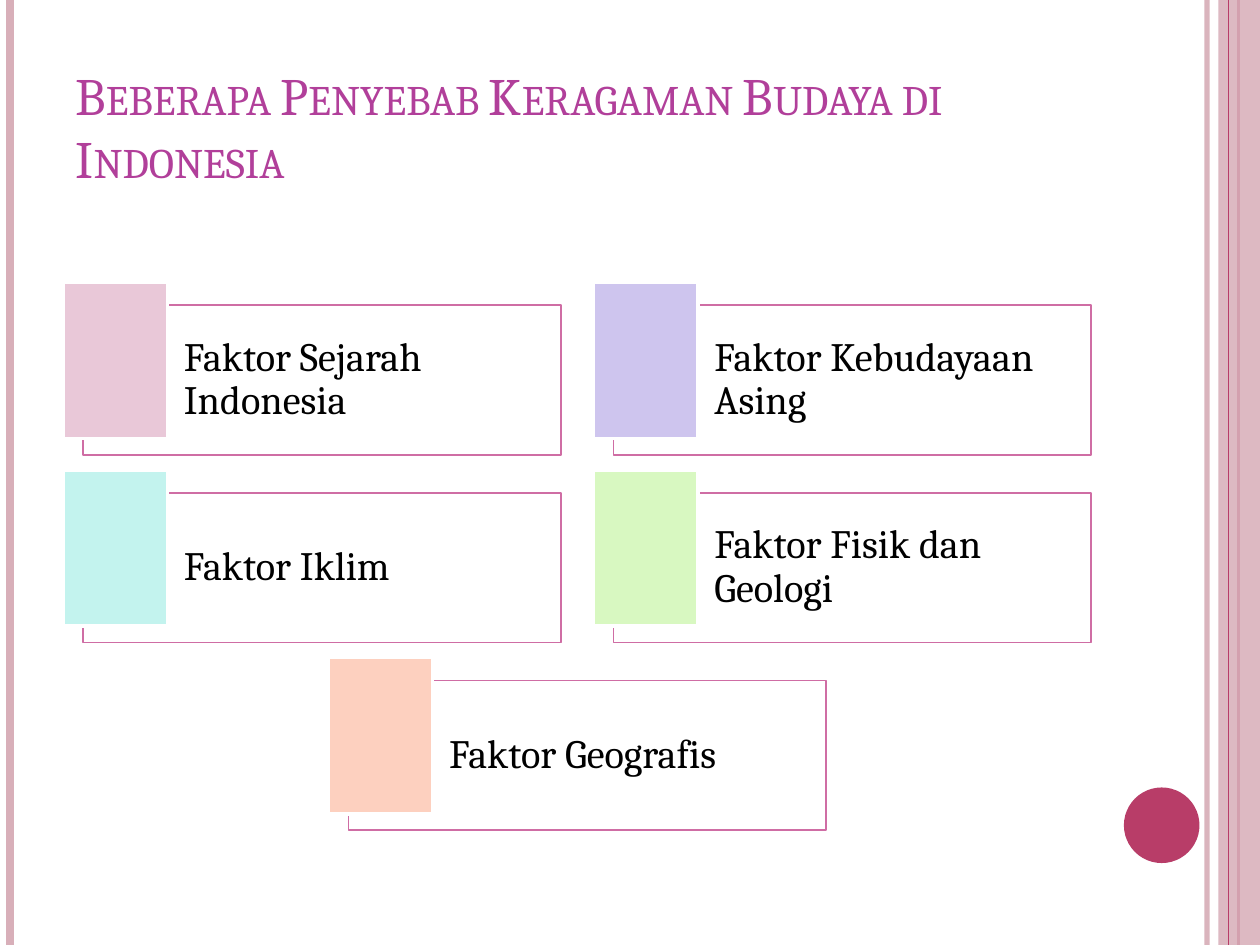
from pptx import Presentation
from pptx.dml.color import RGBColor
from pptx.enum.shapes import MSO_CONNECTOR, MSO_SHAPE
from pptx.enum.text import MSO_ANCHOR, MSO_AUTO_SIZE, PP_ALIGN
from pptx.oxml.ns import qn
from pptx.util import Inches, Pt
from lxml import etree

WHITE = RGBColor(0xFF, 0xFF, 0xFF)
BLACK = RGBColor(0, 0, 0)
ROSE = RGBColor(0xD8, 0xAF, 0xB9)
CRIMSON = RGBColor(0xB8, 0x3D, 0x68)
PURPLE = RGBColor(0xB1, 0x3F, 0x9A)
PINK = RGBColor(0xCF, 0x6D, 0xA4)

FACTORS = [
    ("Faktor Sejarah Indonesia", RGBColor(0xE9, 0xC8, 0xD8)),
    ("Faktor Kebudayaan Asing", RGBColor(0xCE, 0xC5, 0xEE)),
    ("Faktor Iklim", RGBColor(0xC3, 0xF3, 0xEE)),
    ("Faktor Fisik dan Geologi", RGBColor(0xD8, 0xF8, 0xC1)),
    ("Faktor Geografis", RGBColor(0xFD, 0xD0, 0xBF)),
]
COLUMNS = 2
TILE_W, TILE_H = 3.95, 1.37
ROW_PITCH = 1.49


def set_alpha(fill_parent, percent):
    """Make the solid colour found under the element partly transparent."""
    clr = fill_parent.find(".//" + qn("a:srgbClr"))
    etree.SubElement(clr, qn("a:alpha")).set("val", str(percent * 1000))


def add_block(slide, kind, x, y, w, h, fill, line=None, line_pt=1, alpha=None):
    sp = slide.shapes.add_shape(kind, Inches(x), Inches(y), Inches(w), Inches(h))
    sp.shadow.inherit = False
    sp.fill.solid()
    sp.fill.fore_color.rgb = fill
    if alpha:
        set_alpha(sp._element.spPr, alpha)
    if line is None:
        sp.line.fill.background()
    else:
        sp.line.color.rgb = line
        sp.line.width = Pt(line_pt)
    return sp


def add_stripe(slide, x, h, color, width, alpha=None):
    cxn = slide.shapes.add_connector(
        MSO_CONNECTOR.STRAIGHT, Inches(x), 0, Inches(x), Inches(h))
    cxn.line.color.rgb = color
    cxn.line.width = Pt(width)
    if alpha:
        set_alpha(cxn._element.spPr, alpha)
    etree.SubElement(cxn._element.spPr, qn("a:effectLst"))


def write_text(sp, text, size, color, anchor, left=0.1, spacing=None,
               small_caps=False):
    tf = sp.text_frame
    tf.word_wrap = True
    tf.auto_size = MSO_AUTO_SIZE.NONE
    tf.vertical_anchor = anchor
    tf.margin_left = Inches(left)
    tf.margin_right = tf.margin_top = tf.margin_bottom = Inches(0.1)
    p = tf.paragraphs[0]
    p.alignment = PP_ALIGN.LEFT
    if spacing:
        p.line_spacing = spacing
    r = p.add_run()
    r.text = text
    r.font.name = "Cambria"
    r.font.size = Pt(size)
    r.font.color.rgb = color
    if small_caps:
        r.font._element.set("cap", "small")


def add_decor(slide, w, h):
    """Draw the edge stripes and the corner disc for a slide of this size."""
    add_stripe(slide, w - 0.42, h, ROSE, 3, alpha=93)
    add_stripe(slide, 0.08, h, ROSE, 4.5)
    add_stripe(slide, w - 0.17, h, CRIMSON, 1.5)
    add_block(slide, MSO_SHAPE.RECTANGLE, w - 0.33, 0, 0.33, h, ROSE, alpha=87)
    add_stripe(slide, w - 0.25, h, CRIMSON, 0.75)
    add_block(slide, MSO_SHAPE.OVAL, w - 1.08, h - 1.25, 0.6, 0.6, CRIMSON)


def add_title(slide, text, x, y, w, h):
    sp = slide.shapes.title
    sp.left, sp.top, sp.width, sp.height = map(Inches, (x, y, w, h))
    write_text(sp, text, 30, PURPLE, MSO_ANCHOR.BOTTOM, small_caps=True)
    sp.text_frame.margin_top = sp.text_frame.margin_bottom = Inches(0.05)


def add_tile(slide, text, color, x, y):
    dx, dy = 0.16, 0.18
    frame = add_block(slide, MSO_SHAPE.RECTANGLE, x + dx, y + dy,
                      TILE_W - dx, TILE_H - dy, WHITE, PINK, 1, alpha=40)
    write_text(frame, text, 23, BLACK, MSO_ANCHOR.MIDDLE, left=0.8, spacing=0.9)
    add_block(slide, MSO_SHAPE.RECTANGLE, x, y, 0.83, 1.24, color, WHITE, 2)


def add_factor_grid(slide, x, y, w):
    """Lay the tiles out in rows, centring a last row that is not full."""
    pitch = (w - TILE_W) / (COLUMNS - 1)
    for i, (text, color) in enumerate(FACTORS):
        row, col = divmod(i, COLUMNS)
        in_row = min(COLUMNS, len(FACTORS) - row * COLUMNS)
        indent = (COLUMNS - in_row) * pitch / 2
        add_tile(slide, text, color, x + indent + col * pitch,
                 y + row * ROW_PITCH)


def main():
    prs = Presentation()
    prs.slide_width, prs.slide_height = Inches(10), Inches(7.5)
    slide = prs.slides.add_slide(prs.slide_layouts[5])
    add_decor(slide, 10, 7.5)
    add_title(slide, "Beberapa Penyebab Keragaman Budaya di Indonesia",
              0.5, 0.3, 8.17, 1.25)
    add_factor_grid(slide, 0.5, 2.24, 8.16)
    prs.save("out.pptx")


if __name__ == "__main__":
    main()
